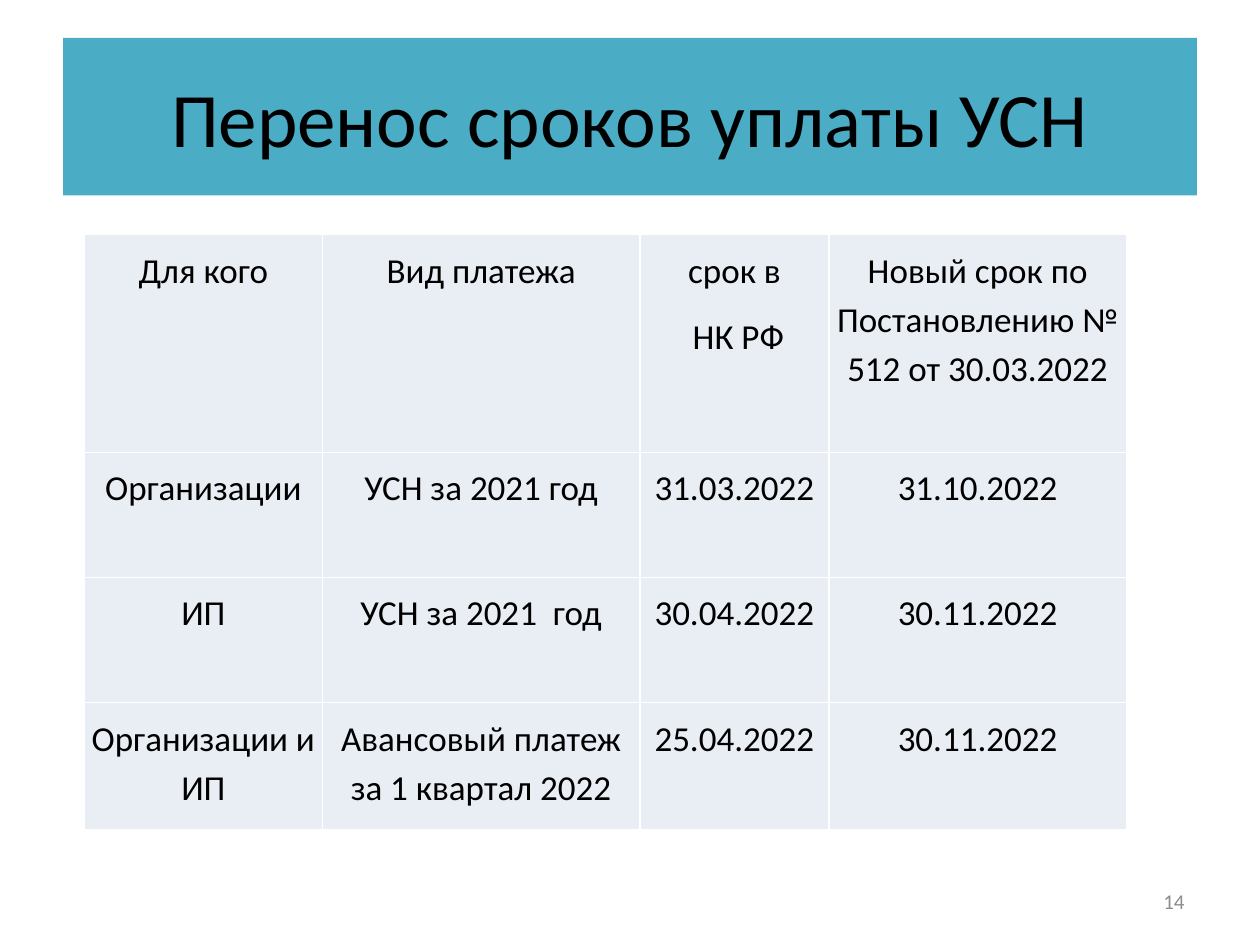
from dataclasses import dataclass

from lxml import etree
from pptx import Presentation
from pptx.dml.color import RGBColor
from pptx.enum import text
from pptx.oxml import ns
from pptx.util import Pt


@dataclass(frozen=True)
class Theme:
    font: str = "Calibri"
    ink: str = "000000"
    muted: str = "8C8C8C"
    banner: str = "4BACC6"
    cell: str = "E9EDF4"
    border: str = "FFFFFF"
    title_size: int = 44
    table_size: int = 20
    number_size: int = 12


THEME = Theme()
COLUMN_WIDTHS = (136, 181.5, 108, 170)
ROW_HEIGHTS = (124.5, 71.5, 71.5, 72.5)
ROWS = (
    ("Для кого", "Вид платежа", "срок в\n НК РФ",
     "Новый срок по Постановлению № 512 от 30.03.2022"),
    ("Организации", "УСН за 2021 год", "31.03.2022", "31.10.2022"),
    ("ИП", "УСН за 2021  год", "30.04.2022", "30.11.2022"),
    ("Организации и ИП", "Авансовый платеж за 1 квартал 2022",
     "25.04.2022", "30.11.2022"),
)


def paint(fill, color):
    fill.solid()
    fill.fore_color.rgb = RGBColor.from_string(color)


def format_text(tf, size, color, align):
    for p in tf.paragraphs:
        p.alignment = align
        for r in p.runs:
            r.font.name = THEME.font
            r.font.size = Pt(size)
            r.font.color.rgb = RGBColor.from_string(color)


def place(sp, box):
    sp.left, sp.top, sp.width, sp.height = (Pt(v) for v in box)


def add_title(s, box, title):
    sp = s.shapes.title
    place(sp, box)
    paint(sp.fill, THEME.banner)
    tf = sp.text_frame
    tf.text = title
    tf.vertical_anchor = text.MSO_ANCHOR.MIDDLE
    format_text(tf, THEME.title_size, THEME.ink, text.PP_ALIGN.CENTER)


def add_borders(cell):
    tc_pr = cell._tc.get_or_add_tcPr()
    for side in ("a:lnL", "a:lnR", "a:lnT", "a:lnB"):
        line = etree.SubElement(tc_pr, ns.qn(side), w=str(Pt(1)))
        solid = etree.SubElement(line, ns.qn("a:solidFill"))
        etree.SubElement(solid, ns.qn("a:srgbClr"), val=THEME.border)


def fill_cell(cell, content):
    add_borders(cell)
    paint(cell.fill, THEME.cell)
    cell.margin_left = cell.margin_right = Pt(3)
    cell.margin_top = cell.margin_bottom = Pt(5)
    tf = cell.text_frame
    tf.text = content
    for p in tf.paragraphs:
        p.line_spacing = 1.15
        p.space_after = Pt(10)
    format_text(tf, THEME.table_size, THEME.ink, text.PP_ALIGN.CENTER)


def add_deadlines(s, left, top):
    box = left, top, sum(COLUMN_WIDTHS), sum(ROW_HEIGHTS)
    table = s.shapes.add_table(
        len(ROWS), len(COLUMN_WIDTHS), *(Pt(v) for v in box)).table
    table.first_row = table.horz_banding = False
    for column, width in zip(table.columns, COLUMN_WIDTHS):
        column.width = Pt(width)
    for row, height, contents in zip(table.rows, ROW_HEIGHTS, ROWS):
        row.height = Pt(height)
        for cell, content in zip(row.cells, contents):
            fill_cell(cell, content)


def add_page_number(s, box, number):
    tf = s.shapes.add_textbox(*(Pt(v) for v in box)).text_frame
    tf.word_wrap = True
    tf.vertical_anchor = text.MSO_ANCHOR.MIDDLE
    tf.text = number
    format_text(tf, THEME.number_size, THEME.muted, text.PP_ALIGN.RIGHT)


def main():
    prs = Presentation()
    prs.slide_width, prs.slide_height = Pt(720), Pt(540)
    s = prs.slides.add_slide(prs.slide_layouts.get_by_name("Title Only"))
    add_title(s, (36, 21.6, 648, 90), "Перенос сроков уплаты УСН")
    add_page_number(s, (516, 500.5, 168, 28.75), "14")
    add_deadlines(s, 48.25, 134)
    prs.save("out.pptx")


if __name__ == "__main__":
    main()
